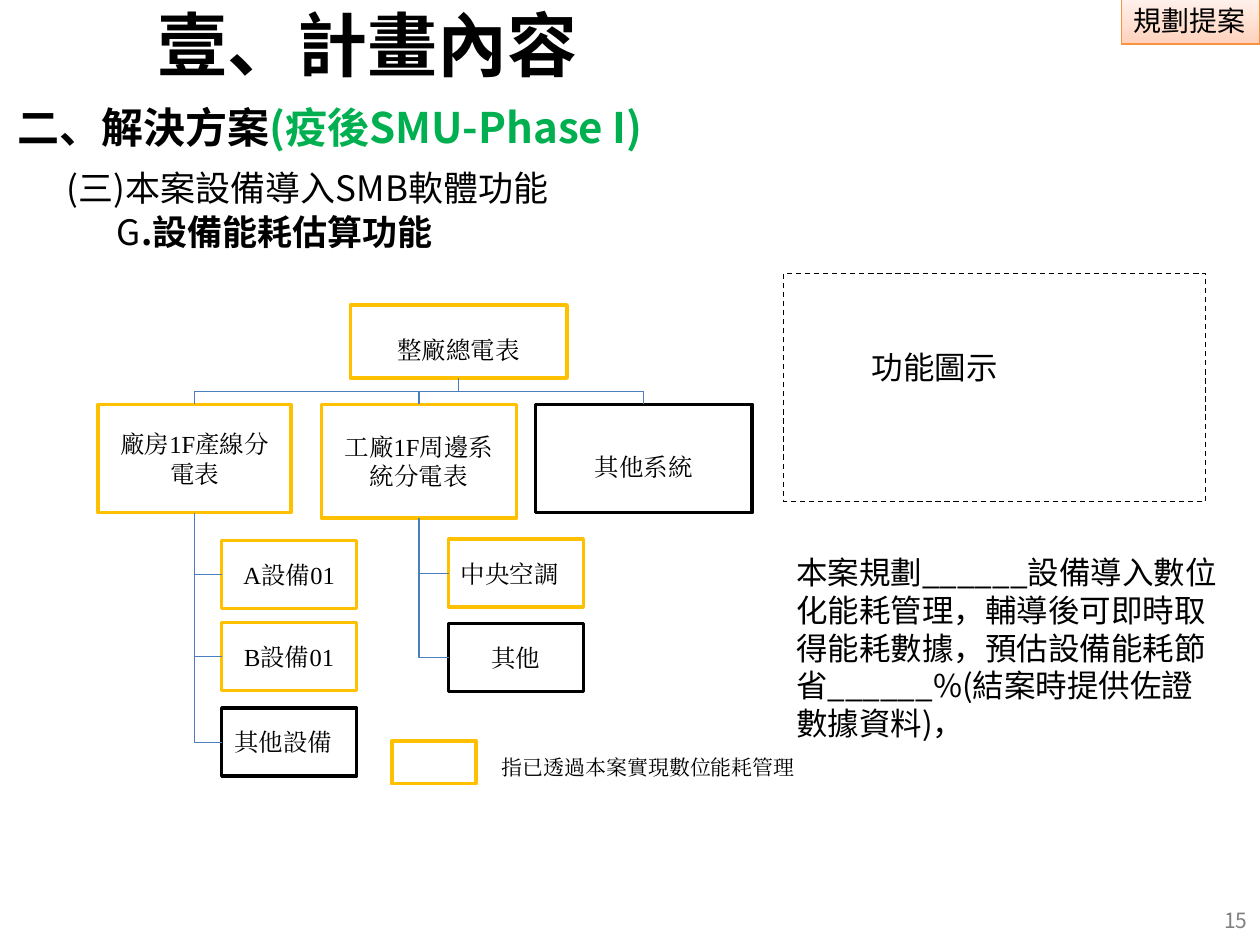
from lxml.etree import SubElement
from pptx import Presentation
from pptx.dml.color import RGBColor
from pptx.enum.dml import MSO_LINE
from pptx.enum.shapes import MSO_CONNECTOR, MSO_SHAPE
from pptx.enum.text import MSO_ANCHOR, PP_ALIGN
from pptx.oxml.ns import qn
from pptx.util import Inches, Pt

SANS, SERIF = "Noto Sans CJK SC", "Times New Roman"
GOLD, BLACK, BLUE = "FFC000", "000000", "4B7EBC"


def rgb(value):
    return RGBColor.from_string(value)


class Deck:
    def __init__(self, width, height):
        self.prs = Presentation()
        self.prs.slide_width, self.prs.slide_height = Inches(width), Inches(height)
        self.s = self.prs.slides.add_slide(self.prs.slide_layouts[6])

    def put_text(self, sp, runs, size, font=SANS, align=PP_ALIGN.LEFT, spacing=None,
                 anchor=MSO_ANCHOR.TOP, wrap=True):
        """Fill a shape with one paragraph; runs are (text, colour, bold)."""
        tf = sp.text_frame
        tf.word_wrap, tf.vertical_anchor = wrap, anchor
        p = tf.paragraphs[0]
        p.alignment = align
        if spacing:
            p.line_spacing = spacing
        for text, color, bold in runs:
            r = p.add_run()
            r.text = text
            for name, value in {"name": font, "size": Pt(size), "bold": bold}.items():
                setattr(r.font, name, value)
            r.font.color.rgb = rgb(color)
            SubElement(r.font._element, qn("a:ea"), typeface=font)

    def text(self, at, runs, size, **style):
        sp = self.s.shapes.add_textbox(*map(Inches, at))
        self.put_text(sp, runs, size, **style)

    def box(self, at, line=None, weight=2, fill="FFFFFF"):
        sp = self.s.shapes.add_shape(MSO_SHAPE.RECTANGLE, *map(Inches, at))
        sp.shadow.inherit = False
        if fill:
            sp.fill.solid()
            sp.fill.fore_color.rgb = rgb(fill)
        else:
            sp.fill.background()
        if line:
            sp.line.color.rgb = rgb(line)
            sp.line.width = Pt(weight)
        else:
            sp.line.fill.background()
        return sp

    def node(self, at, label, line=GOLD, align=PP_ALIGN.CENTER, spacing=None):
        sp = self.box(at, line)
        self.put_text(sp, [(label, BLACK, False)], 14, font=SERIF, align=align,
                      spacing=spacing, anchor=MSO_ANCHOR.MIDDLE)

    def elbow(self, start, end, preset):
        """Draw a bent connector that leaves its start downwards."""
        (x1, y1), (x2, y2) = start, end
        cx, cy = (x1 + x2) / 2, (y1 + y2) / 2
        half_w, half_h = (y2 - y1) / 2, abs(x2 - x1) / 2
        c = self.s.shapes.add_connector(
            MSO_CONNECTOR.ELBOW, Inches(cx - half_w), Inches(cy - half_h),
            Inches(cx + half_w), Inches(cy + half_h))
        c.line.color.rgb = rgb(BLUE)
        c.line.width = Pt(0.75)
        sp_pr = c._element.spPr
        sp_pr.find(qn("a:prstGeom")).set("prst", preset)
        xfrm = sp_pr.find(qn("a:xfrm"))
        if x2 > x1:
            xfrm.set("rot", str(270 * 60000))
            xfrm.set("flipH", "1")
        else:
            xfrm.set("rot", str(90 * 60000))
        SubElement(sp_pr, qn("a:effectLst"))

    def tag(self, at, label):
        sp = self.box(at, "F69240", 0.75)
        sp.fill.gradient()
        sp.fill.gradient_angle = 90
        for stop, (color, pos) in zip(sp.fill.gradient_stops,
                                      (("FFD2BD", 0), ("FFF2ED", 1))):
            stop.color.rgb = rgb(color)
            stop.position = pos
        self.put_text(sp, [(label, BLACK, False)], 16, wrap=False)


def bottom(at):
    return at[0] + at[2] / 2, at[1] + at[3]


def build_tree(deck):
    wide = Pt(26)
    root = (2.78, 2.42, 1.72, 0.58)
    # Each branch: box, label, outline, line spacing, child left edge, children
    branches = [
        ((0.78, 3.21, 1.53, 0.86), "廠房1F產線分電表", GOLD, None, 1.76, [
            (4.29, "A設備01", GOLD, PP_ALIGN.CENTER),
            (4.94, "B設備01", GOLD, PP_ALIGN.CENTER),
            (5.62, "其他設備", BLACK, PP_ALIGN.LEFT)]),
        ((2.55, 3.21, 1.55, 0.9), "工廠1F周邊系統分電表", GOLD, None, 3.56, [
            (4.28, "中央空調", GOLD, PP_ALIGN.LEFT),
            (4.95, "其他", BLACK, PP_ALIGN.CENTER)]),
        ((4.25, 3.21, 1.72, 0.86), "其他系統", BLACK, wide, None, []),
    ]
    deck.node(root, "整廠總電表", spacing=wide)
    for at, label, line, spacing, left, children in branches:
        deck.node(at, label, line, spacing=spacing)
        deck.elbow(bottom(root), (bottom(at)[0], at[1]), "bentConnector3")
        for top, name, color, align in children:
            deck.node((left, top, 1.07, 0.54), name, color, align)
            deck.elbow(bottom(at), (left, top + 0.27), "bentConnector2")


def main():
    deck = Deck(10, 7.5)
    deck.tag((8.9, -0.02, 1.1, 0.37), "規劃提案")
    deck.text((9.25, 7.16, 0.75, 0.32), [("15", "7F7F7F", False)], 12,
              align=PP_ALIGN.RIGHT, spacing=Pt(12), anchor=MSO_ANCHOR.MIDDLE)
    deck.text((-0.43, -0.04, 6.69, 0.68), [("壹、計畫內容", BLACK, True)], 40,
              align=PP_ALIGN.CENTER)
    deck.text((0.04, 0.76, 9.61, 0.63), [("二、解決方案", BLACK, True),
                                        ("(疫後SMU-Phase I)", "00B050", True)], 24)
    deck.text((0.43, 1.27, 8.19, 0.44),
              [("(三)本案設備導入SMB軟體功能", BLACK, False)], 20)
    deck.text((0.83, 1.62, 8.65, 0.44), [("G", BLACK, False),
                                         (".設備能耗估算功能", BLACK, True)], 20)
    build_tree(deck)

    deck.box((3.11, 5.88, 0.67, 0.34), GOLD, fill=None)
    legend = deck.box((3.88, 5.78, 2.74, 0.48))
    deck.put_text(legend, [("指已透過本案實現數位能耗管理", BLACK, False)], 12,
                  font=SERIF, align=PP_ALIGN.JUSTIFY, spacing=Pt(26))

    deck.text((6.22, 4.34, 3.54, 1.62), [(
        "本案規劃______設備導入數位化能耗管理，輔導後可即時取得能耗數據，"
        "預估設備能耗節省______%(結案時提供佐證數據資料)，", BLACK, False)], 18)
    diagram = deck.box((6.22, 2.17, 3.35, 1.81), BLACK, 0.75)
    diagram.line.dash_style = MSO_LINE.DASH
    deck.text((6.82, 2.71, 1.8, 0.4), [("功能圖示", BLACK, False)], 18)
    deck.prs.save("out.pptx")


if __name__ == "__main__":
    main()
